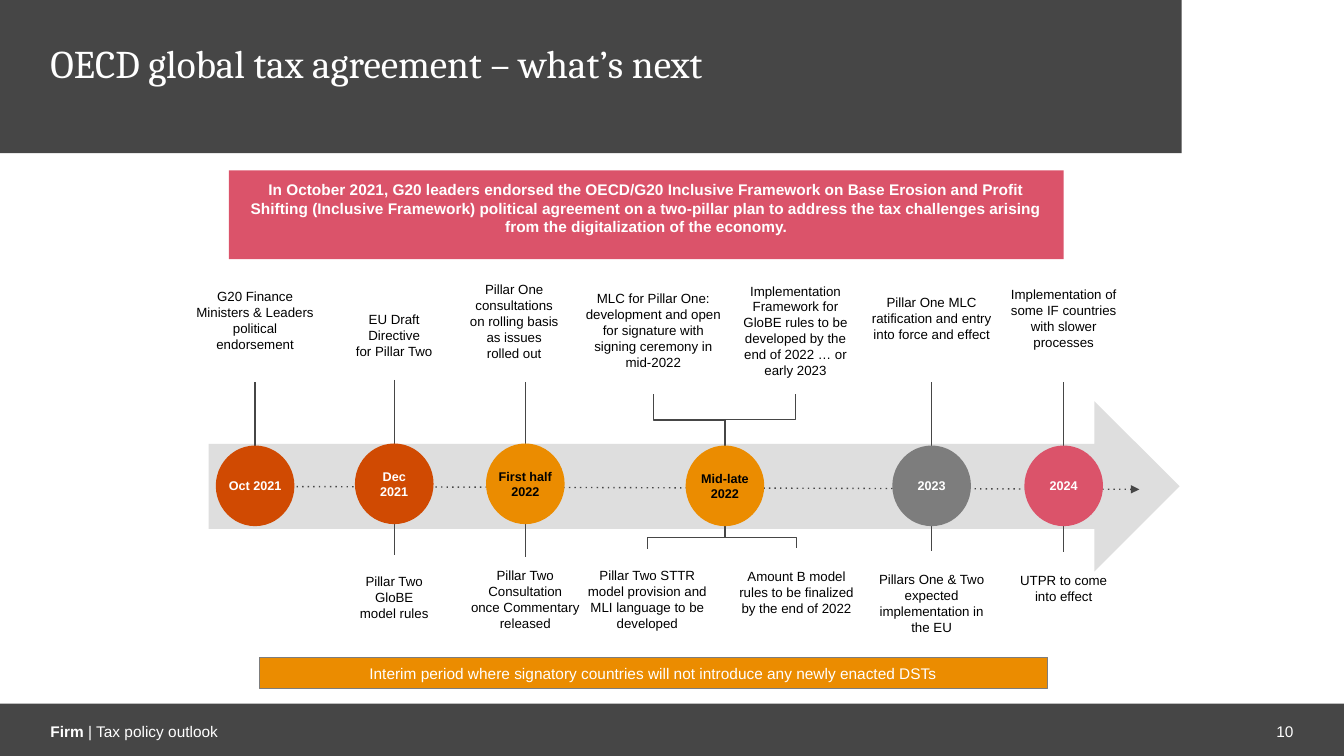
from lxml.etree import SubElement
from pptx import Presentation
from pptx.dml.color import RGBColor
from pptx.enum.shapes import MSO_CONNECTOR, MSO_SHAPE
from pptx.enum.text import MSO_ANCHOR, PP_ALIGN
from pptx.oxml.ns import qn
from pptx.util import Inches, Pt

CHARCOAL = RGBColor(0x46, 0x46, 0x46)
PALE = RGBColor(0xDE, 0xDE, 0xDE)
GREY = RGBColor(0x7D, 0x7D, 0x7D)
RUST = RGBColor(0xD0, 0x4A, 0x02)
AMBER = RGBColor(0xEB, 0x8C, 0x00)
ROSE = RGBColor(0xDB, 0x53, 0x6A)
WHITE = RGBColor(0xFF, 0xFF, 0xFF)
BLACK = RGBColor(0x00, 0x00, 0x00)

CIRCLE_W, CIRCLE_H, LABEL_W = 0.78, 0.8, 1.43

# Each label: centre, top, width, height, text.
MILESTONES = [
    ("Oct 2021", 2.53, 4.42, RUST, WHITE,
     [(2.53, 2.56, LABEL_W, 1.23, "G20 Finance Ministers & Leaders political endorsement")],
     []),
    ("Dec\n2021", 3.91, 4.4, RUST, WHITE,
     [(3.91, 2.88, LABEL_W, 0.89, "EU Draft\nDirective\nfor Pillar Two")],
     [(3.91, 5.51, LABEL_W, 0.83, "Pillar Two\nGloBE\nmodel rules")]),
    ("First half 2022", 5.21, 4.4, AMBER, BLACK,
     [(5.1, 2.59, LABEL_W, 1.2,
       "Pillar One\nconsultations\non rolling basis\nas issues\nrolled out")],
     [(5.21, 5.53, LABEL_W, 0.83, "Pillar Two\nConsultation\nonce Commentary released")]),
    ("Mid-late 2022", 7.19, 4.42, AMBER, BLACK,
     [(6.48, 2.65, 1.56, 1.26, "MLC for Pillar One: development and open for signature "
       "with signing ceremony in mid-2022"),
      (7.89, 2.65, LABEL_W, 1.26, "Implementation Framework for GloBE rules to be "
       "developed by the end of 2022 … or early 2023")],
     [(6.42, 5.45, LABEL_W, 0.98,
       "Pillar Two STTR model provision and MLI language to be developed"),
      (7.9, 5.44, LABEL_W, 0.87, "Amount B model rules to be finalized by the end of 2022")]),
    ("2023", 9.24, 4.42, GREY, WHITE,
     [(9.24, 2.53, LABEL_W, 1.26, "Pillar One MLC ratification and entry into force and effect")],
     [(9.24, 5.47, LABEL_W, 1.02, "Pillars One & Two expected implementation in the EU")]),
    ("2024", 10.55, 4.42, ROSE, WHITE,
     [(10.55, 2.53, LABEL_W, 1.26, "Implementation of some IF countries with slower processes")],
     [(10.55, 5.48, LABEL_W, 0.71, "UTPR to come\ninto effect")]),
]


def add_text(sp, text, size, color, bold=False, align=PP_ALIGN.CENTER,
             anchor=MSO_ANCHOR.MIDDLE, inset=0.1, font="Arial"):
    """Fill a shape with evenly styled paragraphs, one per line of text."""
    tf = sp.text_frame
    tf.word_wrap = True
    tf.vertical_anchor = anchor
    tf.margin_left = tf.margin_right = tf.margin_top = tf.margin_bottom = Inches(inset)
    for i, line in enumerate(text.split("\n")):
        p = tf.add_paragraph() if i else tf.paragraphs[0]
        p.add_run().text = line
        p.alignment = align
        p.font.name, p.font.size, p.font.bold = font, Pt(size), bold
        p.font.color.rgb = color
    return tf


def add_box(slide, kind, box, fill):
    """Add a filled preset shape without outline or shadow."""
    sp = slide.shapes.add_shape(kind, *map(Inches, box))
    sp.shadow.inherit = False
    sp.fill.solid()
    sp.fill.fore_color.rgb = fill
    sp.line.fill.background()
    return sp


def add_textbox(slide, box):
    """Add an empty text box at the given box."""
    return slide.shapes.add_textbox(*map(Inches, box))


def add_line(slide, x1, y1, x2, y2, kind=MSO_CONNECTOR.STRAIGHT):
    """Add a thin charcoal connector without shadow."""
    c = slide.shapes.add_connector(kind, *map(Inches, (x1, y1, x2, y2)))
    c.line.color.rgb = CHARCOAL
    c.line.width = Pt(1)
    SubElement(c._element.spPr, qn("a:effectLst"))
    return c


def add_elbow(slide, x1, y1, x2, y2):
    """Add an elbow running down, across and down, from the upper to the lower point."""
    cx, cy, dx, dy = (x1 + x2) / 2, (y1 + y2) / 2, x2 - x1, y2 - y1
    c = add_line(slide, cx - dy / 2, cy + dx / 2, cx + dy / 2, cy - dx / 2,
                 MSO_CONNECTOR.ELBOW)
    c._element.spPr.find(qn("a:xfrm")).set("rot", "5400000")


def add_stem(slide, upper, lower):
    """Join two points by a straight stem, or an elbow when they are far apart sideways."""
    if abs(upper[0] - lower[0]) > 0.2:
        add_elbow(slide, *upper, *lower)
    else:
        x = max(upper[0], lower[0])
        add_line(slide, x, upper[1], x, lower[1])


def add_label(slide, label):
    """Add one event description centred on its position."""
    cx, top, w, h, text = label
    add_text(add_textbox(slide, (cx - w / 2, top, w, h)), text, 9.5, BLACK)


def add_milestone(slide, name, cx, top, fill, color, above, below):
    """Add a dated circle with its stems and labels above and below."""
    for label in above:
        add_stem(slide, (label[0], label[1] + label[3]), (cx, top))
        add_label(slide, label)
    for label in below:
        add_stem(slide, (cx, top + CIRCLE_H), (label[0], label[1]))
        add_label(slide, label)
    sp = add_box(slide, MSO_SHAPE.FLOWCHART_CONNECTOR,
                 (cx - CIRCLE_W / 2, top, CIRCLE_W, CIRCLE_H), fill)
    add_text(sp, name, 9, color, bold=True, inset=0)


def add_timeline(slide, box):
    """Add the block arrow, its dotted axis and every milestone."""
    left, top, w, h = box
    add_box(slide, MSO_SHAPE.RIGHT_ARROW, box, PALE)
    mid = top + h / 2
    axis = add_line(slide, left + 0.21, mid, left + w - 0.4, mid + 0.03)
    ln = axis.line._get_or_add_ln()
    SubElement(ln, qn("a:prstDash"), val="dot")
    SubElement(ln, qn("a:tailEnd"), type="triangle")
    for milestone in MILESTONES:
        add_milestone(slide, *milestone)


def add_header(slide, box):
    """Add the dark title band and the title."""
    left, top, w, h = box
    add_box(slide, MSO_SHAPE.RECTANGLE, box, CHARCOAL)
    title = add_textbox(slide, (left + 0.52, top + 0.41, w - 0.55, 0.46))
    add_text(title, "OECD global tax agreement – what’s next", 28, WHITE,
             align=PP_ALIGN.LEFT, anchor=MSO_ANCHOR.TOP, inset=0, font="Cambria")


def add_footer(slide, box):
    """Add the dark footer band with the publisher and page number."""
    left, top, w, h = box
    add_box(slide, MSO_SHAPE.RECTANGLE, box, CHARCOAL)
    y = top + 0.21
    tf = add_text(add_textbox(slide, (left + 0.52, y, 4.5, 0.13)), "Firm", 11, WHITE,
                  align=PP_ALIGN.LEFT, inset=0)
    p = tf.paragraphs[0]
    p.runs[0].font.bold = True
    p.add_run().text = " | Tax policy outlook"
    add_text(add_textbox(slide, (left + w - 3.52, y, 3, 0.13)), "10", 11, WHITE,
             align=PP_ALIGN.RIGHT, inset=0)


def add_banners(slide, summary_box, interim_box):
    """Add the summary above the timeline and the interim note below it."""
    sp = add_box(slide, MSO_SHAPE.RECTANGLE, summary_box, ROSE)
    add_text(sp, "In October 2021, G20 leaders endorsed the OECD/G20 Inclusive Framework on "
             "Base Erosion and Profit Shifting (Inclusive Framework) political agreement on a "
             "two-pillar plan to address the tax challenges arising from the digitalization "
             "of the economy.", 11, WHITE, bold=True, anchor=MSO_ANCHOR.TOP)
    sp = add_box(slide, MSO_SHAPE.RECTANGLE, interim_box, AMBER)
    sp.line.color.rgb = GREY
    sp.line.width = Pt(0.75)
    add_text(sp, "Interim period where signatory countries will not introduce any newly "
             "enacted DSTs", 11, WHITE)


def main():
    """Build the slide and save it."""
    prs = Presentation()
    prs.slide_width, prs.slide_height = Inches(13.33), Inches(7.5)
    slide = prs.slides.add_slide(prs.slide_layouts[6])
    add_header(slide, (-0.02, -0.02, 11.74, 1.54))
    add_footer(slide, (-0.02, 6.98, 13.37, 0.54))
    add_timeline(slide, (2.07, 3.98, 9.63, 1.69))
    add_banners(slide, (2.27, 1.69, 8.28, 0.88), (2.57, 6.52, 7.82, 0.31))
    prs.save("out.pptx")


if __name__ == "__main__":
    main()
